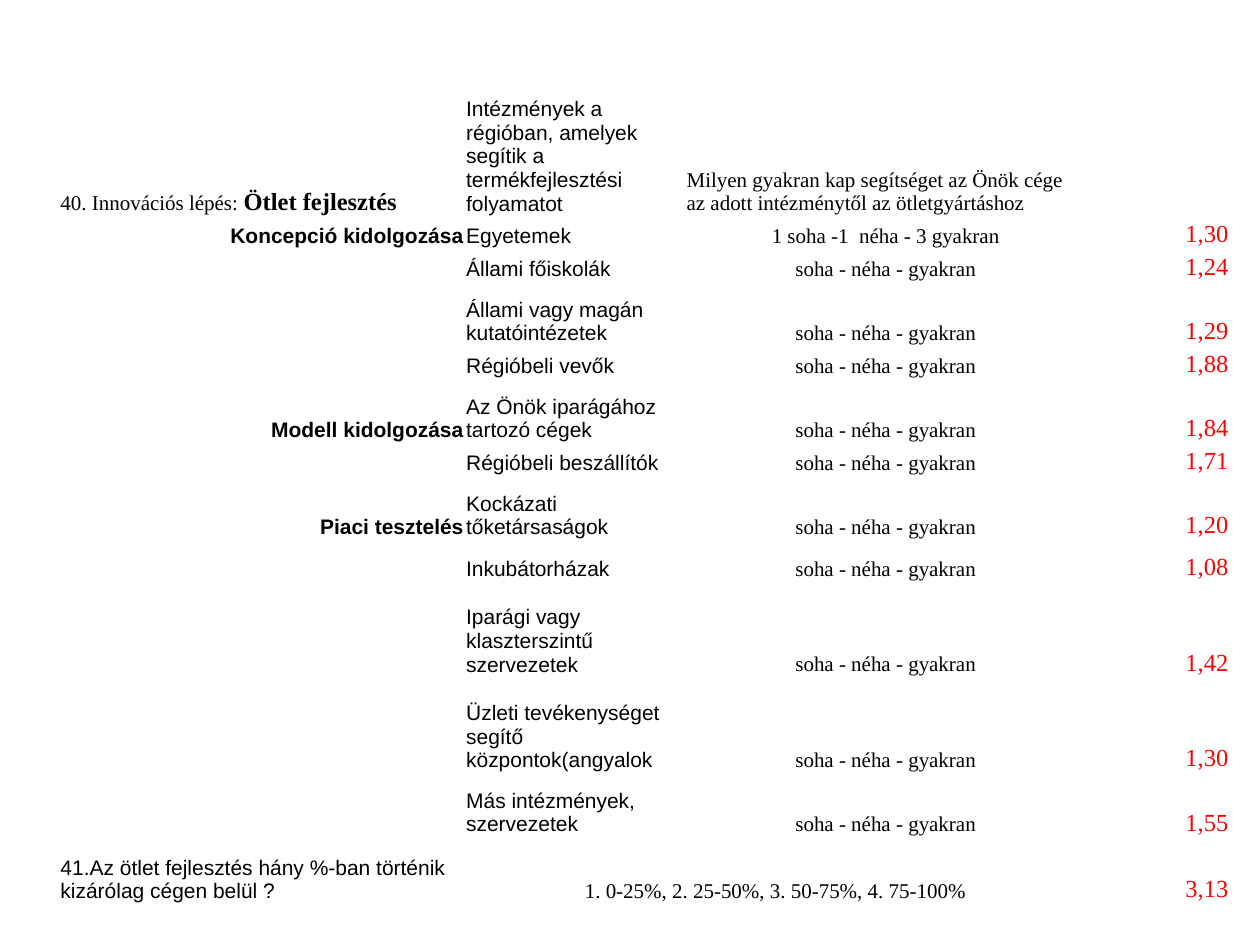
from pptx import Presentation
from pptx.dml.color import RGBColor
from pptx.enum.text import MSO_ANCHOR, PP_ALIGN
from pptx.util import Inches, Pt

BLACK = RGBColor(0, 0, 0)
RED = RGBColor(255, 0, 0)
SANS, SERIF = "Arial", "Times New Roman"

STEP = ("40. Innovációs lépés: ", "Ötlet fejlesztés")
INSTITUTIONS = "Intézmények a régióban, amelyek segítik a termékfejlesztési folyamatot"
FREQUENCY = "Milyen gyakran kap segítséget az Önök cége az adott intézménytől az ötletgyártáshoz"
SCALE = "soha - néha - gyakran"
ANSWERS = [
    ("Koncepció kidolgozása", "Egyetemek", "1 soha -1  néha - 3 gyakran", "1,30", 0.26),
    ("", "Állami főiskolák", SCALE, "1,24", 0.26),
    ("", "Állami vagy magán kutatóintézetek", SCALE, "1,29", 0.51),
    ("", "Régióbeli vevők", SCALE, "1,88", 0.26),
    ("Modell kidolgozása", "Az Önök iparágához tartozó cégek", SCALE, "1,84", 0.51),
    ("", "Régióbeli beszállítók", SCALE, "1,71", 0.26),
    ("Piaci tesztelés", "Kockázati tőketársaságok", SCALE, "1,20", 0.51),
    ("", "Inkubátorházak", SCALE, "1,08", 0.33),
    ("", "Iparági vagy klaszterszintű szervezetek", SCALE, "1,42", 0.76),
    ("", "Üzleti tevékenységet segítő központok(angyalok", SCALE, "1,30", 0.76),
    ("", "Más intézmények, szervezetek", SCALE, "1,55", 0.51),
]
IN_HOUSE = (
    "41.Az ötlet fejlesztés hány %-ban történik kizárólag cégen belül ?",
    "1. 0-25%, 2. 25-50%, 3. 50-75%, 4. 75-100%",
    "3,13",
)
COLUMN_WIDTHS = [3.22, 1.75, 3.18, 0.57, 0.57]
ROW_HEIGHTS = [1.32] + [answer[-1] for answer in ANSWERS] + [0.53]


def write(cell, text, font_name=SANS, align=PP_ALIGN.LEFT, size=12, bold=False, color=BLACK):
    paragraph = cell.text_frame.paragraphs[0]
    paragraph.alignment = align
    paragraph.font.name = font_name
    paragraph.font.size = Pt(size)
    paragraph.font.bold = bold
    paragraph.font.color.rgb = color
    paragraph.add_run().text = text
    return paragraph


def write_score(cell, score):
    write(cell, score, SERIF, PP_ALIGN.RIGHT, 14, color=RED)


presentation = Presentation()
presentation.slide_width, presentation.slide_height = Inches(10), Inches(7.5)
slide = presentation.slides.add_slide(presentation.slide_layouts[6])
table = slide.shapes.add_table(
    len(ROW_HEIGHTS), len(COLUMN_WIDTHS), Inches(0.47), Inches(0.39),
    Inches(sum(COLUMN_WIDTHS)), Inches(sum(ROW_HEIGHTS)),
).table
table.first_row = table.horz_banding = False
for column, width in zip(table.columns, COLUMN_WIDTHS):
    column.width = Inches(width)
for row, height in zip(table.rows, ROW_HEIGHTS):
    row.height = Inches(height)
for cell in table.iter_cells():
    cell.fill.background()
    cell.vertical_anchor = MSO_ANCHOR.BOTTOM
    cell.margin_left = cell.margin_right = cell.margin_top = Inches(0.01)
    cell.margin_bottom = 0

step = write(table.cell(0, 0), STEP[0], SERIF)
step_name = step.add_run()
step_name.text = STEP[1]
step_name.font.size, step_name.font.bold = Pt(14), True
write(table.cell(0, 1), INSTITUTIONS)
write(table.cell(0, 2), FREQUENCY, SERIF)

for index, (stage, institution, scale, score, _) in enumerate(ANSWERS, 1):
    if stage:
        write(table.cell(index, 0), stage, align=PP_ALIGN.RIGHT, bold=True)
    write(table.cell(index, 1), institution)
    write(table.cell(index, 2), scale, SERIF, PP_ALIGN.CENTER)
    write_score(table.cell(index, 4), score)

last = len(ROW_HEIGHTS) - 1
question, ranges, score = IN_HOUSE
table.cell(last, 1).merge(table.cell(last, 2))
write(table.cell(last, 0), question)
write(table.cell(last, 1), ranges, SERIF, PP_ALIGN.CENTER)
write_score(table.cell(last, 4), score)

for cell in table.iter_cells():
    if not cell.text_frame.text:
        cell.text_frame.paragraphs[0].font.size = Pt(12)

properties = table._tbl.tblPr
style = properties.find("{*}tableStyleId")
style.text = "{2D5ABB26-0587-4C30-8999-92F81FD0307C}"

presentation.save("out.pptx")
